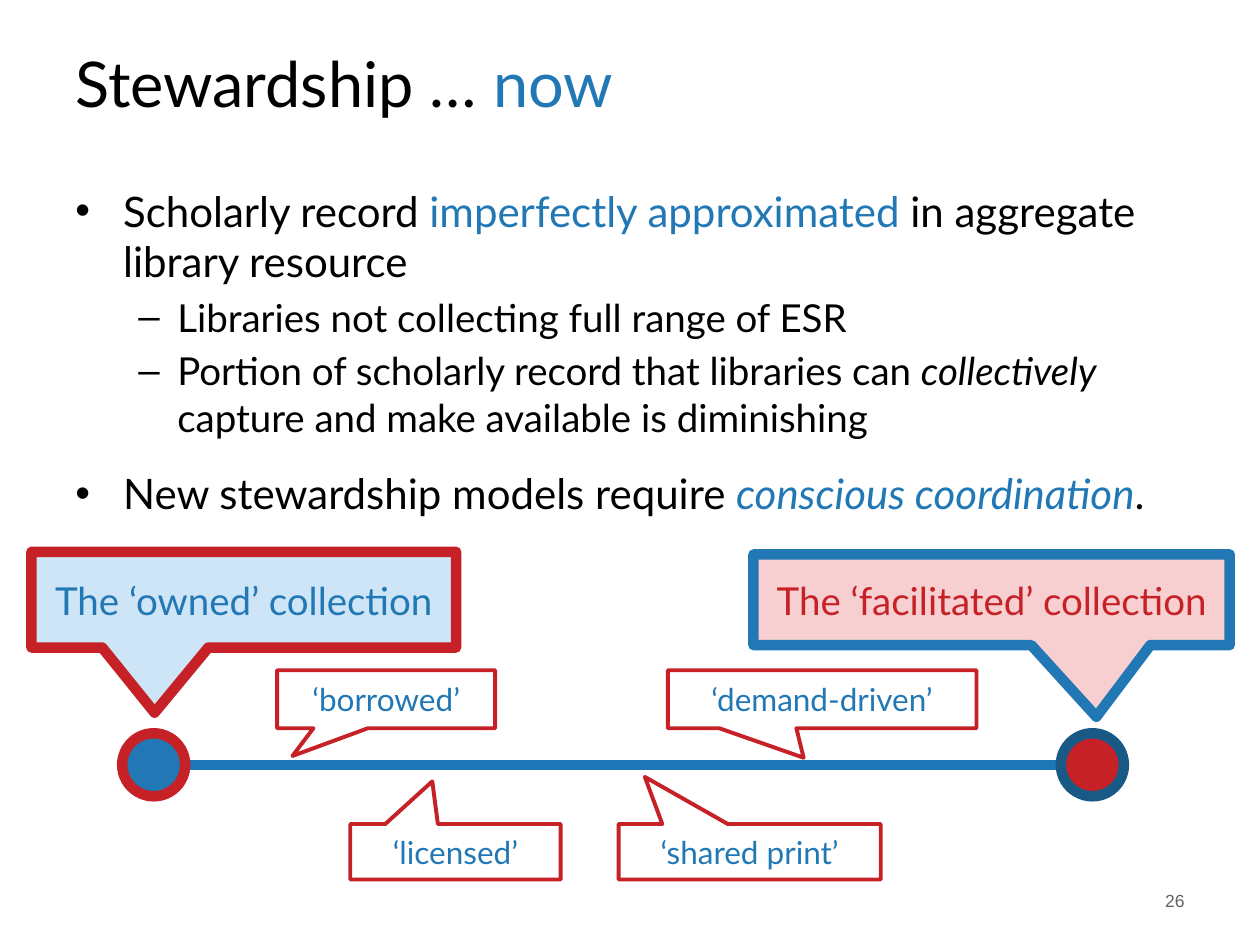
from dataclasses import dataclass

from lxml.etree import SubElement
from pptx import Presentation
from pptx.dml.color import RGBColor
from pptx.enum.shapes import MSO_CONNECTOR, MSO_SHAPE
from pptx.enum.text import MSO_ANCHOR as Anchor, PP_ALIGN as Align
from pptx.oxml.ns import qn
from pptx.util import Emu, Inches, Pt

COLUMNS, ROWS = 100, 75
BLACK = RGBColor(0x00, 0x00, 0x00)
WHITE = RGBColor(0xFF, 0xFF, 0xFF)
GRAY = RGBColor(0x64, 0x64, 0x64)
BLUE = RGBColor(0x21, 0x78, 0xB5)
AXIS_BLUE = RGBColor(0x1D, 0x76, 0xB5)
DARK_BLUE = RGBColor(0x18, 0x59, 0x86)
PALE_BLUE = RGBColor(0xCD, 0xE5, 0xF6)
RED = RGBColor(0xC5, 0x21, 0x27)
PALE_RED = RGBColor(0xF7, 0xCF, 0xD0)

THICK, THIN = 6, 2.25
AXIS_ROW, AXIS_START, AXIS_END = 60.7, 12.2, 85.6
DOT_SIZE = 5


@dataclass(frozen=True)
class Box:
    column: float
    row: float
    columns: float
    rows: float


@dataclass(frozen=True)
class Words:
    text: str
    color: RGBColor = BLACK
    italic: bool = False


@dataclass(frozen=True)
class Level:
    size: float
    margin: float
    hanging: float
    bullet: str


@dataclass(frozen=True)
class Point:
    level: Level
    words: tuple[Words, ...]
    before: float


@dataclass(frozen=True)
class Dot:
    column: float
    fill: RGBColor
    outline: RGBColor


@dataclass(frozen=True)
class Callout:
    text: str
    box: Box
    tip: tuple[float, float]
    size: float = 18
    color: RGBColor = BLUE
    fill: RGBColor = WHITE
    outline: RGBColor = RED
    weight: float = THIN


MAIN = Level(24, 0.38, 0.38, "•")
SUB = Level(22, 0.81, 0.31, "–")

POINTS = (
    Point(MAIN, (Words("Scholarly record "), Words("imperfectly approximated", BLUE),
                 Words(" in aggregate library resource")), 0),
    Point(SUB, (Words("Libraries not collecting full range of ESR"),), 4.4),
    Point(SUB, (Words("Portion of scholarly record that libraries can "),
                Words("collectively", italic=True),
                Words(" capture and make available is diminishing")), 4.4),
    Point(MAIN, (Words("New stewardship models require "),
                 Words("conscious coordination", BLUE, True), Words(".")), 16),
)

DOTS = (Dot(AXIS_END + 1.1, RED, DARK_BLUE), Dot(AXIS_START, BLUE, RED))

CALLOUTS = (
    Callout("The ‘owned’ collection", Box(2.5, 43.8, 33.7, 7.6), (-0.21, 1.18),
            22, BLUE, PALE_BLUE, RED, THICK),
    Callout("The ‘facilitated’ collection", Box(59.8, 44, 37.8, 7.2), (0.22, 1.29),
            22, RED, PALE_RED, BLUE, THICK),
    Callout("‘borrowed’", Box(22, 53.2, 17.3, 4.6), (-0.43, 0.98)),
    Callout("‘licensed’", Box(27.8, 65.4, 16.7, 4.4), (-0.11, -1.27)),
    Callout("‘demand-driven’", Box(53, 53.2, 24.5, 4.6), (-0.06, 1.01)),
    Callout("‘shared print’", Box(49.1, 65.4, 20.8, 4.4), (-0.4, -1.35)),
)


def across(columns: float) -> Emu:
    return Emu(round(deck.slide_width * columns / COLUMNS))


def down(rows: float) -> Emu:
    return Emu(round(deck.slide_height * rows / ROWS))


def place(box: Box) -> tuple[Emu, Emu, Emu, Emu]:
    return across(box.column), down(box.row), across(box.columns), down(box.rows)


def add_words(paragraph, words: Words, size: float, font: str = "Lato") -> None:
    run = paragraph.add_run()
    run.text = words.text
    run.font.name = font
    run.font.size = Pt(size)
    run.font.italic = words.italic
    run.font.color.rgb = words.color


def add_frame(box: Box, anchor: Anchor):
    frame = slide.shapes.add_textbox(*place(box)).text_frame
    frame.word_wrap = True
    frame.vertical_anchor = anchor
    return frame


def paint(shape, fill: RGBColor, outline: RGBColor, weight: float) -> None:
    shape.shadow.inherit = False
    shape.fill.solid()
    shape.fill.fore_color.rgb = fill
    shape.line.color.rgb = outline
    shape.line.width = Pt(weight)
    SubElement(shape.line._get_or_add_ln(), qn("a:round"))


def draw_point(paragraph, point: Point) -> None:
    level = point.level
    paragraph.space_before = Pt(point.before)
    properties = paragraph._p.get_or_add_pPr()
    properties.set("marL", str(Inches(level.margin)))
    properties.set("indent", str(-Inches(level.hanging)))
    SubElement(properties, qn("a:buFont"), typeface="Arial")
    SubElement(properties, qn("a:buChar"), char=level.bullet)
    for words in point.words:
        add_words(paragraph, words, level.size)


def draw_axis() -> None:
    axis = slide.shapes.add_connector(
        MSO_CONNECTOR.STRAIGHT, across(AXIS_START), down(AXIS_ROW),
        across(AXIS_END), down(AXIS_ROW))
    axis.line.color.rgb = AXIS_BLUE
    axis.line.width = Pt(THICK)
    SubElement(axis._element.spPr, qn("a:effectLst"))


def draw_dot(dot: Dot) -> None:
    half = DOT_SIZE / 2
    box = Box(dot.column - half, AXIS_ROW - half, DOT_SIZE, DOT_SIZE)
    circle = slide.shapes.add_shape(MSO_SHAPE.OVAL, *place(box))
    paint(circle, dot.fill, dot.outline, THICK)


def draw_callout(callout: Callout) -> None:
    bubble = slide.shapes.add_shape(MSO_SHAPE.RECTANGULAR_CALLOUT, *place(callout.box))
    bubble.adjustments[0], bubble.adjustments[1] = callout.tip
    paint(bubble, callout.fill, callout.outline, callout.weight)
    frame = bubble.text_frame
    frame.word_wrap = True
    frame.vertical_anchor = Anchor.MIDDLE
    label = frame.paragraphs[0]
    label.alignment = Align.CENTER
    add_words(label, Words(callout.text, callout.color), callout.size)


deck = Presentation()
deck.slide_width, deck.slide_height = Inches(10), Inches(7.5)
slide = deck.slides.add_slide(deck.slide_layouts[6])

heading = add_frame(Box(5, 3, 90, 7), Anchor.MIDDLE).paragraphs[0]
for part in (Words("Stewardship … "), Words("now", BLUE)):
    add_words(heading, part, 36)

body = add_frame(Box(5, 14.2, 90, 55.3), Anchor.TOP)
for index, point in enumerate(POINTS):
    draw_point(body.add_paragraph() if index else body.paragraphs[0], point)

page_number = add_frame(Box(71.7, 69.5, 23.3, 4), Anchor.MIDDLE).paragraphs[0]
page_number.alignment = Align.RIGHT
add_words(page_number, Words("26", GRAY), 10, "Arial")

draw_axis()
for dot in DOTS:
    draw_dot(dot)
for callout in CALLOUTS:
    draw_callout(callout)

deck.save("out.pptx")
